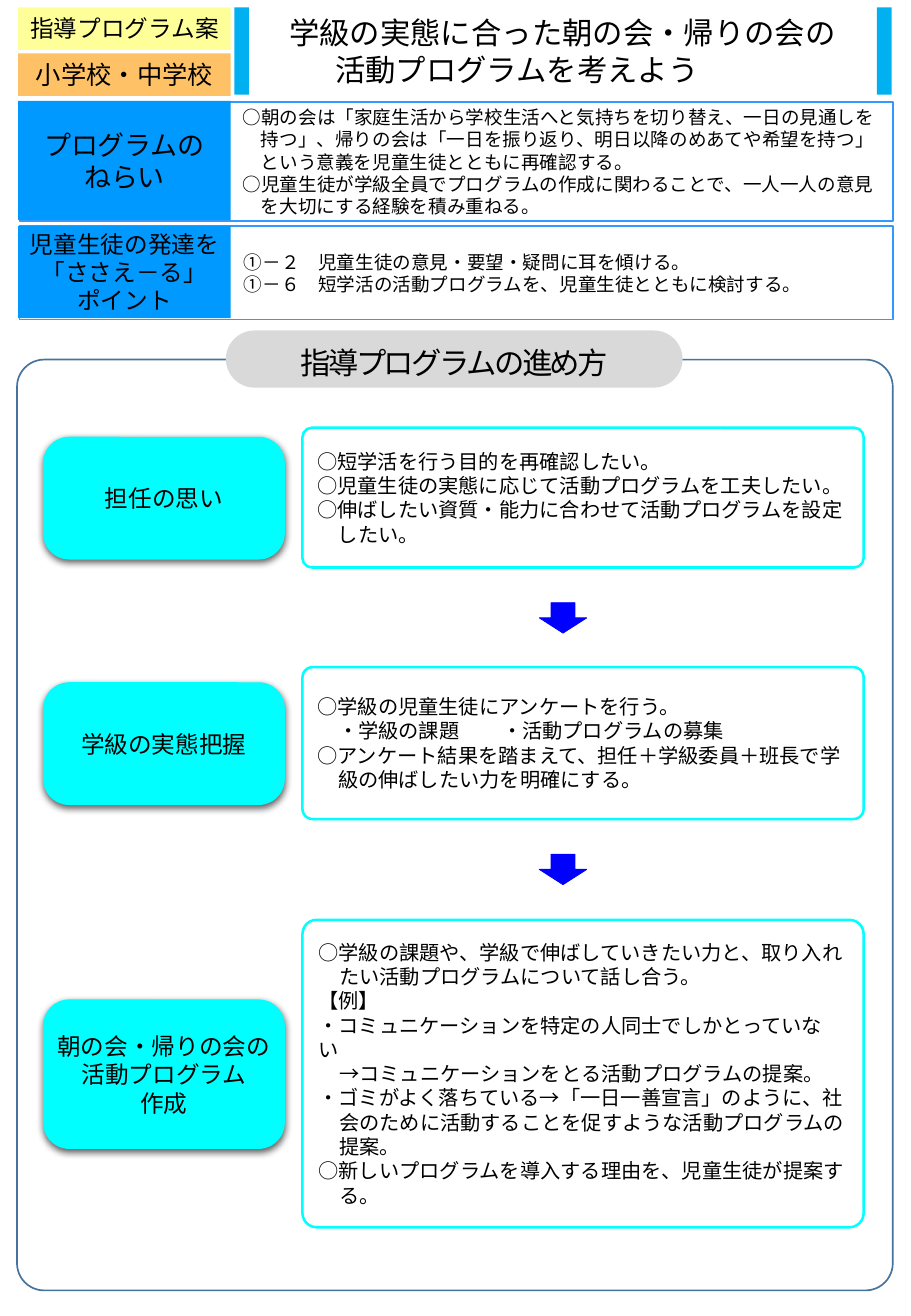
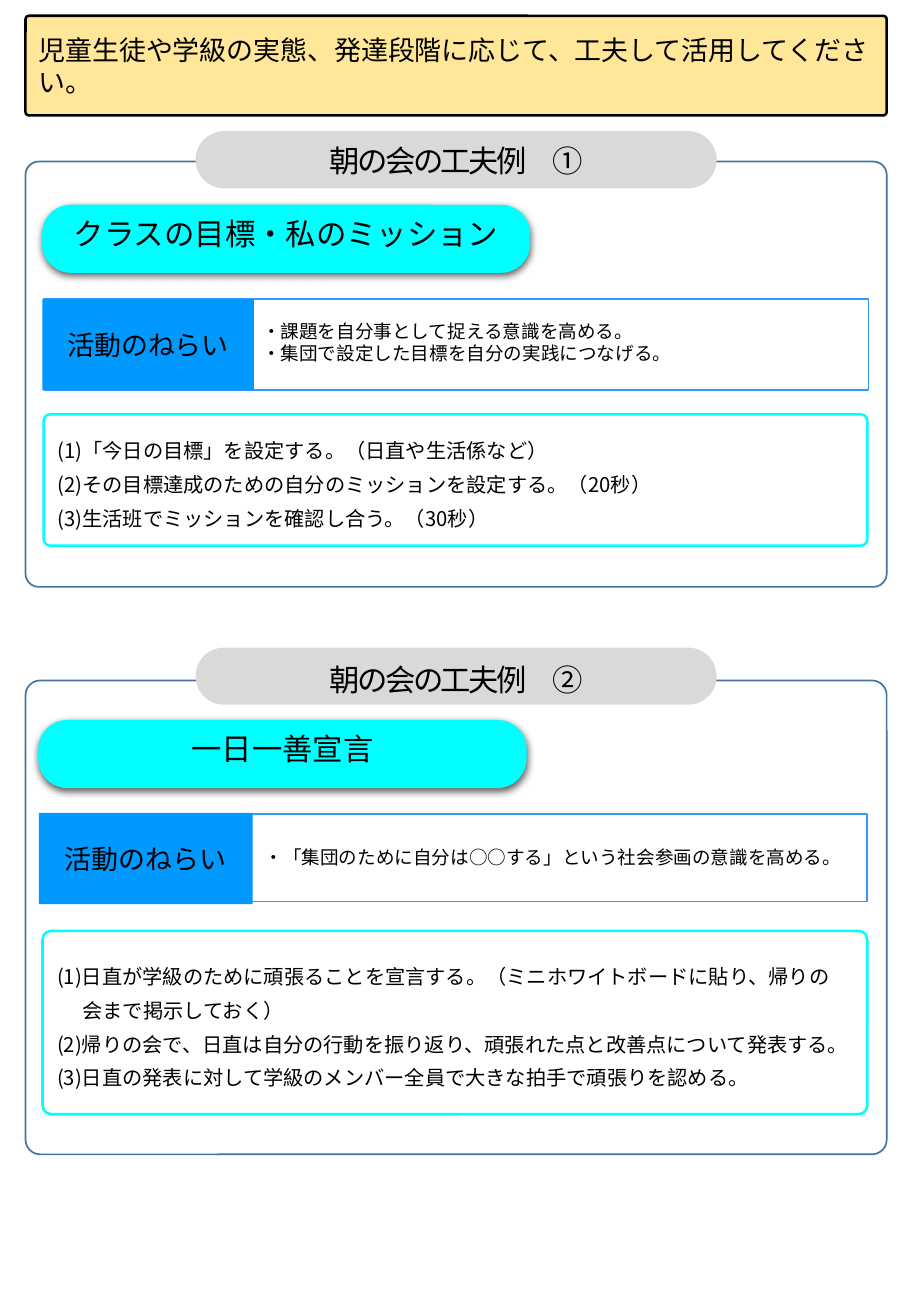
from lxml.etree import SubElement
from pptx import Presentation
from pptx.dml.color import RGBColor
from pptx.enum.shapes import MSO_SHAPE
from pptx.enum.text import MSO_ANCHOR, PP_ALIGN
from pptx.oxml.ns import qn
from pptx.util import Pt

SCALE = 9144
BLACK = RGBColor(0x00, 0x00, 0x00)
WHITE = RGBColor(0xFF, 0xFF, 0xFF)
CYAN = RGBColor(0x00, 0xFF, 0xFF)
BLUE = RGBColor(0x00, 0x00, 0xFF)
LABEL = RGBColor(0x00, 0x99, 0xFF)
FRAME = RGBColor(0x33, 0x99, 0xFF)
BAR = RGBColor(0x00, 0xB0, 0xF0)
NAVY = RGBColor(0x43, 0x73, 0x9E)
GREY = RGBColor(0xD9, 0xD9, 0xD9)
LEMON = RGBColor(0xFF, 0xFF, 0x99)
ORANGE = RGBColor(0xFF, 0x99, 0x00)
CREAM = RGBColor(0xFF, 0xE6, 0x99)
SANS = "Noto Sans CJK JP"
LATIN = "Calibri"
RECT = MSO_SHAPE.RECTANGLE
ROUND = MSO_SHAPE.ROUNDED_RECTANGLE
MID = PP_ALIGN.CENTER

PANEL = dict(form=ROUND, adj=0.031, line=NAVY, width=1)
PILL = dict(form=ROUND, adj=0.5, fill=GREY, size=18, align=MID, space=1.2, track=-150)
BADGE = dict(form=ROUND, fill=CYAN, line=CYAN, width=0.75, shade=True, align=MID, wrap=False)
CARD = dict(form=ROUND, fill=WHITE, line=CYAN, width=1.5, size=12)
TAG = dict(form=RECT, align=MID, wrap=False, face=LATIN)
BORDER = dict(form=RECT, line=FRAME, width=1)


def write(frame, lines, size, face, align, space, track, wrap):
    frame.word_wrap = wrap
    frame.vertical_anchor = MSO_ANCHOR.MIDDLE
    for i, line in enumerate(lines):
        indent, text = line if isinstance(line, tuple) else (0, line)
        para = frame.paragraphs[0] if i == 0 else frame.add_paragraph()
        looks = dict(alignment=PP_ALIGN.LEFT if indent else align, line_spacing=space)
        for key, value in looks.items():
            setattr(para, key, value)
        props = para._p.get_or_add_pPr()
        if indent:
            props.set("marL", str(indent * SCALE))
        if "\t" in text:
            tabs = SubElement(props, qn("a:tabLst"))
            for stop in (17, 152):
                SubElement(tabs, qn("a:tab"), pos=str(stop * SCALE), algn="l")
        run = para.add_run()
        run.text = text
        for key, value in dict(name=face, size=Pt(size)).items():
            setattr(run.font, key, value)
        run.font.color.rgb = BLACK
        marks = run._r.get_or_add_rPr()
        SubElement(marks, qn("a:ea"), typeface=face)
        if track:
            marks.set("spc", str(track))


def box(slide, at, lines=(), form=None, adj=None, fill=None, alpha=None, line=None,
        width=1, shade=False, size=11, face=SANS, align=PP_ALIGN.LEFT, space=None,
        track=None, wrap=True, top=5):
    place = [n * SCALE for n in at]
    if form is None:
        shape = slide.shapes.add_textbox(*place)
    else:
        shape = slide.shapes.add_shape(form, *place)
        shape.shadow.inherit = False
        if adj is not None:
            shape.adjustments[0] = adj
        if fill is None:
            shape.fill.background()
        else:
            shape.fill.solid()
            shape.fill.fore_color.rgb = fill
        if alpha:
            tint = shape._element.spPr.find(qn("a:solidFill"))[0]
            SubElement(tint, qn("a:alpha"), val=str(alpha * 1000))
        if line is None:
            shape.line.fill.background()
        else:
            shape.line.color.rgb = line
            shape.line.width = Pt(width)
        if shade:
            effect = shape._element.spPr.find(qn("a:effectLst"))
            cast = SubElement(effect, qn("a:outerShdw"), blurRad=str(Pt(4.5)),
                              dist=str(Pt(1.5)), dir="5400000", rotWithShape="0")
            tint = SubElement(cast, qn("a:srgbClr"), val=str(BLACK))
            SubElement(tint, qn("a:alpha"), val="63000")
    if lines:
        shape.text_frame.margin_top = top * SCALE
        write(shape.text_frame, lines, size, face, align, space, track, wrap)


deck = Presentation()
deck.slide_width = 750 * SCALE
deck.slide_height = 1083 * SCALE
plan, ideas = [deck.slides.add_slide(deck.slide_layouts[6]) for _ in range(2)]

box(plan, (204, 7, 518, 70),
    ["学級の実態に合った朝の会・帰りの会の", (62, "活動プログラムを考えよう")], size=18, align=MID)
box(plan, (15, 6, 175, 35), ["指導プログラム案"], fill=LEMON, size=14, **TAG)
box(plan, (15, 44, 175, 35), ["小学校・中学校"], fill=ORANGE, alpha=60, size=15, **TAG)
for left in (193, 722):
    box(plan, (left, 6, 12, 72), form=RECT, fill=BAR)

aims = [
    (plan, (15, 83, 175, 98), (16, 84, 719, 98), (190, 84, 545, 98), 16,
     ["プログラムの", "ねらい"],
     ["○朝の会は「家庭生活から学校生活へと気持ちを切り替え、一日の見通しを",
      (15, "持つ」、帰りの会は「一日を振り返り、明日以降のめあてや希望を持つ」"),
      (15, "という意義を児童生徒とともに再確認する。"),
      "○児童生徒が学級全員でプログラムの作成に関わることで、一人一人の意見",
      (15, "を大切にする経験を積み重ねる。")]),
    (plan, (15, 186, 175, 76), (16, 186, 719, 77), (191, 187, 543, 75), 14,
     ["児童生徒の発達を", "「ささえ－る」", "ポイント"],
     ["①－２　児童生徒の意見・要望・疑問に耳を傾ける。",
      "①－６　短学活の活動プログラムを、児童生徒とともに検討する。"]),
    (ideas, (35, 246, 174, 75), (36, 246, 679, 75), (206, 244, 505, 75), 16,
     ["活動のねらい"],
     ["・課題を自分事として捉える意識を高める。",
      "・集団で設定した目標を自分の実践につなげる。"]),
    (ideas, (32, 669, 176, 75), (36, 670, 678, 72), (208, 669, 503, 72), 16,
     ["活動のねらい"],
     ["・「集団のために自分は○○する」という社会参画の意識を高める。"]),
]
for slide, tag, edge, area, size, name, lines in aims:
    box(slide, edge, **BORDER)
    box(slide, tag, name, fill=LABEL, size=size, **TAG)
    box(slide, area, lines)

box(plan, (14, 296, 721, 766), **PANEL)
box(plan, (186, 272, 376, 47), ["指導プログラムの進め方"], **PILL)

steps = [
    (360, 100, 352, 115, 0.067, ["担任の思い"],
     ["○短学活を行う目的を再確認したい。",
      "○児童生徒の実態に応じて活動プログラムを工夫したい。",
      "○伸ばしたい資質・能力に合わせて活動プログラムを設定",
      (17, "したい。")]),
    (562, 100, 549, 125, 0.067, ["学級の実態把握"],
     ["○学級の児童生徒にアンケートを行う。",
      "\t・学級の課題\t・活動プログラムの募集",
      "○アンケート結果を踏まえて、担任＋学級委員＋班長で学",
      (17, "級の伸ばしたい力を明確にする。")]),
    (823, 122, 757, 253, 0.046, ["朝の会・帰りの会の", "活動プログラム", "作成"],
     ["○学級の課題や、学級で伸ばしていきたい力と、取り入れ",
      (17, "たい活動プログラムについて話し合う。"),
      "【例】",
      "・コミュニケーションを特定の人同士でしかとっていない　",
      (17, "→コミュニケーションをとる活動プログラムの提案。"),
      "・ゴミがよく落ちている→「一日一善宣言」のように、社",
      (17, "会のために活動することを促すような活動プログラムの"),
      (17, "提案。"),
      "○新しいプログラムを導入する理由を、児童生徒が提案す",
      (17, "る。")]),
]
for y, high, top, tall, adj, name, lines in steps:
    box(plan, (36, y, 198, high), name, adj=21.1 / high, size=14, **BADGE)
    box(plan, (249, top, 462, tall), lines, adj=adj, **CARD)
for y in (496, 703):
    box(plan, (444, y, 39, 25), form=MSO_SHAPE.DOWN_ARROW, fill=BLUE, line=BLUE, width=0.5)

box(ideas, (21, 13, 709, 82),
    ["児童生徒や学級の実態、発達段階に応じて、工夫して活用してください。"],
    form=ROUND, adj=0.035, fill=CREAM, line=BLACK, width=1.5, size=16)

cases = [
    (133, 350, 108, 0, "朝の会の工夫例　①", (35, 169, 401, 55),
     "クラスの目標・私のミッション", (36, 341, 678, 108),
     ["(1)「今日の目標」を設定する。（日直や生活係など）",
      "(2)その目標達成のための自分のミッションを設定する。（20秒）",
      "(3)生活班でミッションを確認し合う。（30秒）"]),
    (560, 390, 533, 5, "朝の会の工夫例　②", (32, 593, 401, 55),
     "一日一善宣言", (35, 766, 679, 151),
     ["(1)日直が学級のために頑張ることを宣言する。（ミニホワイトボードに貼り、帰りの",
      (21, "会まで掲示しておく）"),
      "(2)帰りの会で、日直は自分の行動を振り返り、頑張れた点と改善点について発表する。",
      "(3)日直の発表に対して学級のメンバー全員で大きな拍手で頑張りを認める。"]),
]
for y, tall, head, top, title, spot, name, area, lines in cases:
    box(ideas, (21, y, 709, tall), **PANEL)
    box(ideas, (161, head, 429, 47), [title], top=top, **PILL)
    box(ideas, spot, [name], adj=0.427, size=18, space=Pt(15), **BADGE)
    box(ideas, area, lines, adj=0.048, space=Pt(20), **CARD)

deck.save("out.pptx")
